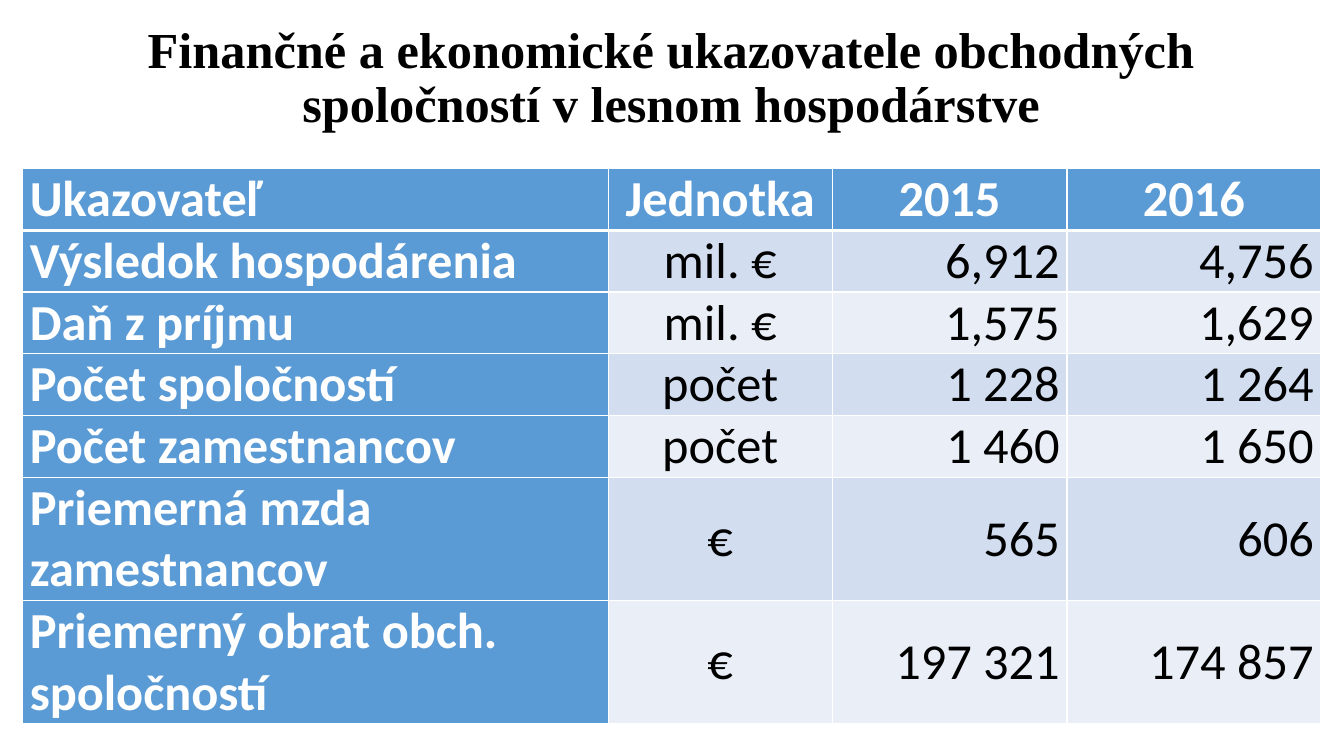
from lxml import etree
from pptx import Presentation
from pptx import util as u
from pptx.dml.color import RGBColor
from pptx.enum import text
from pptx.oxml import ns

HUES = {"head": "5B9BD5", "odd": "D2DEEF", "even": "EAEFF7",
        "light": "FFFFFF", "dark": "000000"}
ALIGN = text.PP_ALIGN
TITLE = ("Finančné a ekonomické ukazovatele obchodných "
         "spoločností v lesnom hospodárstve")
COLS = [14.76, 5.64, 5.92, 6.4]
LINE = 1.55  # height of one text line in the table, cm
ROWS = [
    ("Ukazovateľ", "Jednotka", "2015", "2016"),
    ("Výsledok hospodárenia", "mil. €", "6,912", "4,756"),
    ("Daň z príjmu", "mil. €", "1,575", "1,629"),
    ("Počet spoločností", "počet", "1 228", "1 264"),
    ("Počet zamestnancov", "počet", "1 460", "1 650"),
    ("Priemerná mzda\nzamestnancov", "€", "565", "606"),
    ("Priemerný obrat obch.\nspoločností", "€", "197 321", "174 857"),
]


def apply(item, props):
    for key, val in props.items():
        setattr(item, key, val)


def style(par, align, face, hue, bold):
    par.alignment = align
    apply(par.font, {"name": face, "size": u.Pt(36), "bold": bold})
    par.font.color.rgb = RGBColor.from_string(HUES[hue])


def border(cell, sides):
    """Draw white borders; sides maps a tag to a width in points."""
    props = cell._tc.get_or_add_tcPr()
    for tag, width in sides.items():
        line = etree.SubElement(props, ns.qn("a:" + tag), w=str(u.Pt(width)))
        fill = etree.SubElement(line, ns.qn("a:solidFill"))
        etree.SubElement(fill, ns.qn("a:srgbClr"), val=HUES["light"])


def add_title(slide):
    title = slide.shapes.title
    apply(title, {"left": u.Cm(2.31), "top": u.Cm(0.71),
                  "width": u.Cm(29.21), "height": u.Cm(2.57)})
    frame = title.text_frame
    frame.text = TITLE
    apply(frame, {"word_wrap": True, "auto_size": text.MSO_AUTO_SIZE.NONE,
                  "vertical_anchor": text.MSO_ANCHOR.MIDDLE})
    par = frame.paragraphs[0]
    style(par, ALIGN.CENTER, "Times New Roman", "dark", True)
    par.line_spacing = 0.9


def fill_cell(cell, words, row, col):
    head = row == 0 or col == 0
    # Text
    cell.text_frame.text = words
    apply(cell, {"margin_left": u.Cm(0.18), "margin_right": u.Cm(0.18),
                 "margin_top": 0, "margin_bottom": 0,
                 "vertical_anchor": text.MSO_ANCHOR.TOP if head
                 else text.MSO_ANCHOR.MIDDLE})
    if col == 0:
        align = ALIGN.JUSTIFY
    elif row == 0 or col == 1:
        align = ALIGN.CENTER
    else:
        align = ALIGN.RIGHT
    for par in cell.text_frame.paragraphs:
        style(par, align, "Calibri", "light" if head else "dark", head)
    # Borders and fill
    border(cell, {"lnL": 1, "lnR": 1, "lnT": 3 if row == 1 else 1,
                  "lnB": 3 if row == 0 else 1})
    hue = "head" if head else "odd" if row % 2 else "even"
    cell.fill.solid()
    cell.fill.fore_color.rgb = RGBColor.from_string(HUES[hue])


def add_grid(slide):
    highs = [LINE * (1 + row[0].count("\n")) for row in ROWS]
    grid = slide.shapes.add_table(
        len(ROWS), len(COLS), u.Cm(0.57), u.Cm(4.25),
        u.Cm(sum(COLS)), u.Cm(sum(highs))).table
    for col, width in zip(grid.columns, COLS):
        col.width = u.Cm(width)
    for r, (cells, high) in enumerate(zip(ROWS, highs)):
        grid.rows[r].height = u.Cm(high)
        for c, words in enumerate(cells):
            fill_cell(grid.cell(r, c), words, r, c)


def main():
    deck = Presentation()
    apply(deck, {"slide_width": u.Cm(33.87), "slide_height": u.Cm(19.05)})
    slide = deck.slides.add_slide(deck.slide_layouts[5])
    add_title(slide)
    add_grid(slide)
    deck.save("out.pptx")


if __name__ == "__main__":
    main()
